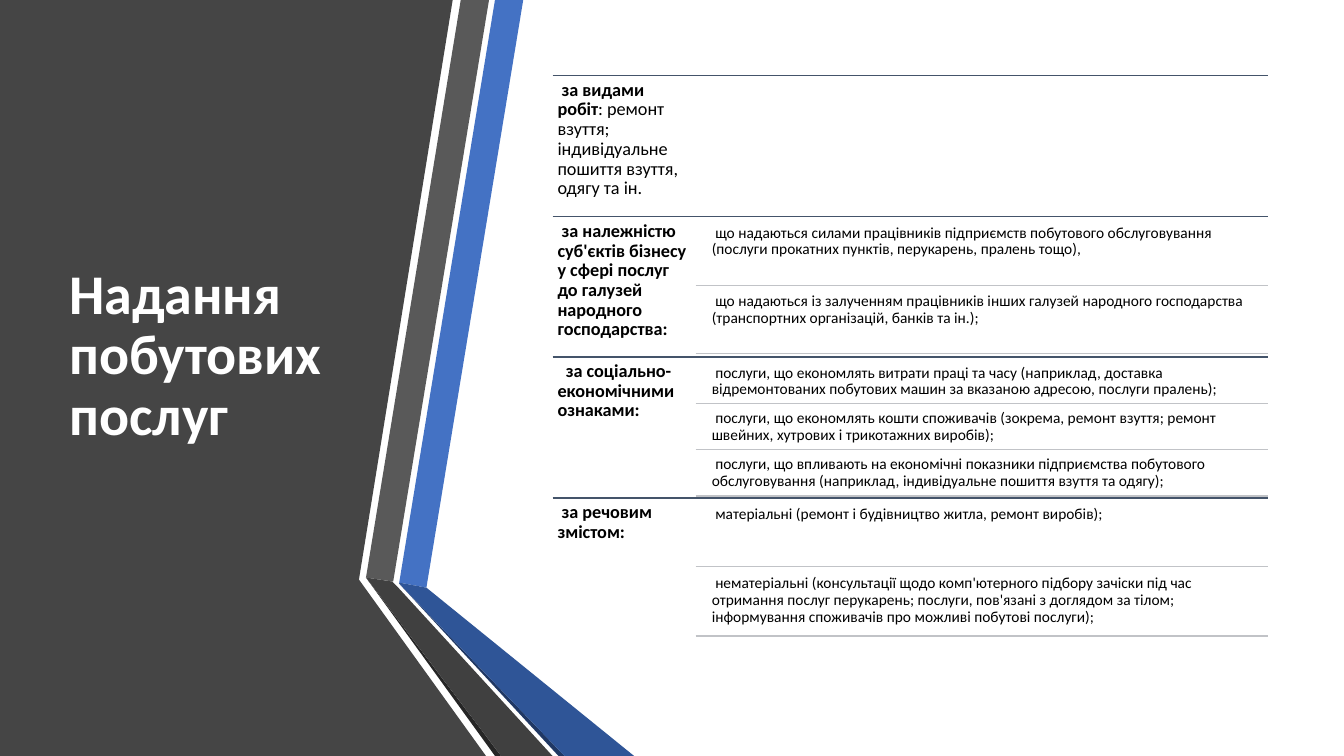
from pptx import Presentation
from pptx.dml.color import RGBColor
from pptx.enum.shapes import MSO_CONNECTOR
from pptx.enum.text import MSO_ANCHOR
from pptx.oxml.ns import qn
from pptx.util import Pt
from lxml.etree import SubElement

SCALE = 9144
WIDTH, HEIGHT = 1333, 750
LEFT, SPLIT, RIGHT = 548, 690, 1258
TOP, STEP = 75, 139.7
INDENT, GAP = 11, 0.05

BANDS = [
    ("454545", [(0, 0), (449, 0), (356, 575), (482, 750), (0, 750)]),
    ("4472C4", [(396, 578), (423, 583), (519, 0), (491, 0)]),
    ("595959", [(485, 0), (457, 0), (363, 573), (390, 577)]),
    ("262626", [(363, 573), (491, 750), (497, 750)]),
    ("203864", [(396, 579), (554, 750), (560, 750)]),
    ("2F5597", [(396, 579), (560, 750), (629, 750), (423, 583), (396, 578)]),
    ("404040", [(548, 750), (395, 583), (389, 577), (363, 573), (497, 750)]),
]

GROUPS = [
    (" за видами робіт", ": ремонт взуття; індивідуальне пошиття взуття, одягу та ін.", []),
    (" за належністю суб'єктів бізнесу у сфері послуг до галузей народного господарства:", "", [
        " що надаються силами працівників підприємств побутового обслуговування (послуги прокатних пунктів, перукарень, пралень тощо), ",
        " що надаються із залученням працівників інших галузей народного господарства (транспортних організацій, банків та ін.); ",
    ]),
    ("  за соціально-економічними ознаками:", "", [
        " послуги, що економлять витрати праці та часу (наприклад, доставка відремонтованих побутових машин за вказаною адресою, послуги пралень);",
        " послуги, що економлять кошти споживачів (зокрема, ремонт взуття; ремонт швейних, хутрових і трикотажних виробів); ",
        " послуги, що впливають на економічні показники підприємства побутового обслуговування (наприклад, індивідуальне пошиття взуття та одягу);",
    ]),
    (" за речовим змістом:", "", [
        " матеріальні (ремонт і будівництво житла, ремонт виробів); ",
        " нематеріальні (консультації щодо комп'ютерного підбору зачіски під час отримання послуг перукарень; послуги, пов'язані з доглядом за тілом; інформування споживачів про можливі побутові послуги); ",
    ]),
]


def px(size):
    return round(size) * SCALE


def color(code):
    return RGBColor.from_string(code)


def apply(item, values):
    for name, value in values.items():
        setattr(item, name, value)


class Painter:
    """Draws styled elements on the current slide."""

    def __init__(self, slide, font):
        self.shapes = slide.shapes
        self.font = font

    def band(self, fill, points):
        form = self.shapes.build_freeform(*points[0], scale=SCALE)
        form.add_line_segments(points[1:], close=True)
        shape = form.convert_to_shape()
        shape.shadow.inherit = False
        shape.fill.solid()
        shape.fill.fore_color.rgb = color(fill)
        shape.line.fill.background()

    def rule(self, left, y, tint):
        line = self.shapes.add_connector(
            MSO_CONNECTOR.STRAIGHT, px(left), px(y), px(RIGHT), px(y))
        line.line.width = Pt(1)
        line.line.color.rgb = color(tint)
        SubElement(line._element.spPr, qn("a:effectLst"))

    def text(self, box, runs, size, tint="000000", pad=5, anchor=MSO_ANCHOR.TOP):
        frame = self.shapes.add_textbox(*map(px, box)).text_frame
        apply(frame, {
            "word_wrap": True, "vertical_anchor": anchor,
            "margin_left": px(pad), "margin_right": px(pad),
            "margin_top": px(5), "margin_bottom": px(5),
        })
        para = frame.paragraphs[0]
        para.line_spacing = 0.9
        for words, bold in runs:
            run = para.add_run()
            run.text = words
            apply(run.font, {"name": self.font, "size": Pt(size), "bold": bold})
            run.font.color.rgb = color(tint)

    def group(self, top, head, tail, items):
        self.rule(LEFT, top, "44546A")
        runs = [(head, True)] + ([(tail, False)] if tail else [])
        self.text((LEFT, top, SPLIT - LEFT, STEP), runs, 13)
        high = STEP / (len(items) * (1 + GAP) + GAP)
        left = SPLIT + INDENT
        for row, words in enumerate(items):
            y = top + high * (GAP + row * (1 + GAP))
            self.text((left, y, RIGHT - left, high), [(words, False)], 11)
            self.rule(SPLIT, y + high, "C1C3C7")


def main():
    deck = Presentation()
    apply(deck, {"slide_width": px(WIDTH), "slide_height": px(HEIGHT)})
    pen = Painter(deck.slides.add_slide(deck.slide_layouts[6]), "Calibri")
    for fill, points in BANDS:
        pen.band(fill, points)
    pen.text((59, 75, 304, 558), [("Надання побутових послуг ", True)], 40,
             "FFFFFF", 10, MSO_ANCHOR.MIDDLE)
    for row, (head, tail, items) in enumerate(GROUPS):
        pen.group(TOP + STEP * row, head, tail, items)
    deck.save("out.pptx")


if __name__ == "__main__":
    main()
